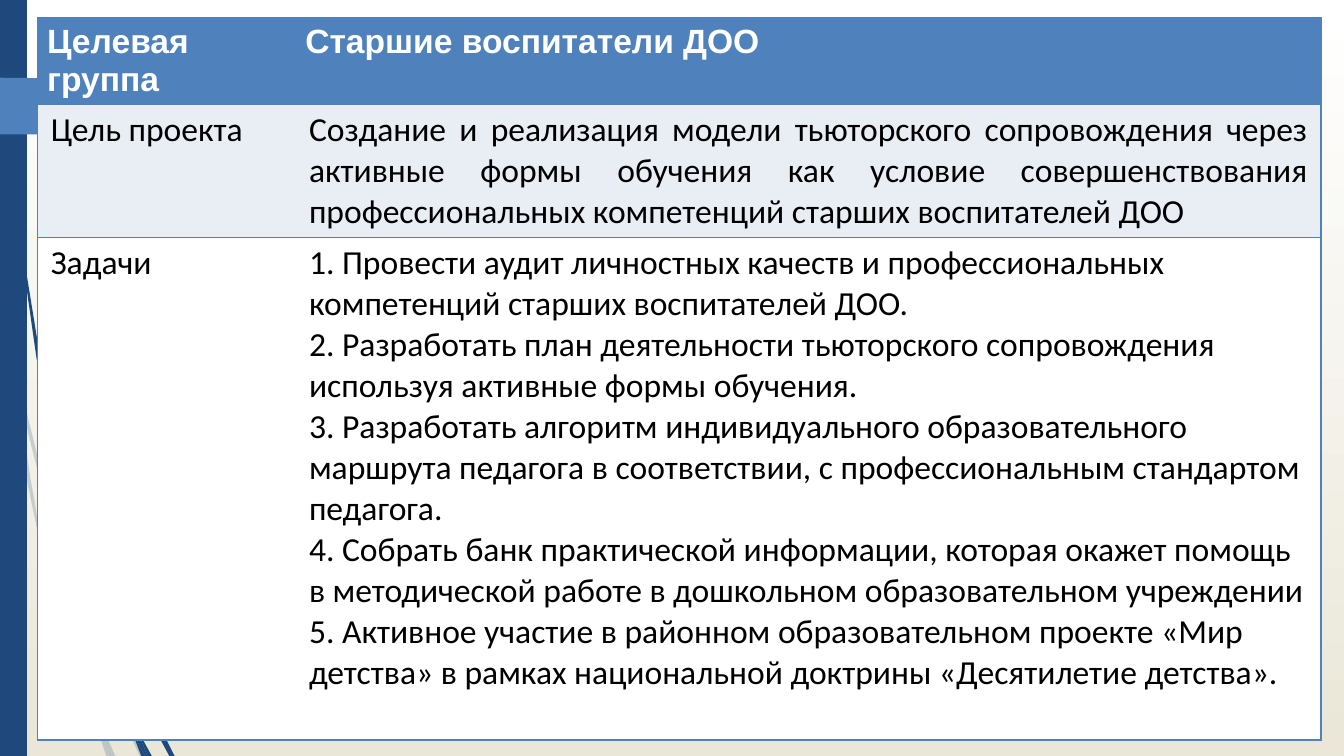
from lxml.etree import SubElement
from pptx import Presentation
from pptx.dml.color import RGBColor
from pptx.enum.shapes import MSO_SHAPE as Preset
from pptx.enum.text import PP_ALIGN as Align
from pptx.oxml.ns import qn
from pptx.util import Cm, Pt

NAVY = RGBColor(0x1F, 0x49, 0x7D)
BLUE = RGBColor(0x4F, 0x81, 0xBD)
PALE = RGBColor(0xE9, 0xED, 0xF4)
CREAM = RGBColor(0xEA, 0xE7, 0xD8)
WHITE = RGBColor(0xFF, 0xFF, 0xFF)
BLACK = RGBColor(0, 0, 0)

WIDTH, HEIGHT = 25.4, 14.29

FAINT_STEMS = [
    [(1.02, 9.93), (1.5, 11.4), (1.5, 11.18), (1.09, 9.91), (0.76, 8.81),
     (0.48, 7.7), (0.25, 6.58), (0.3, 7.16), (0.51, 8.1), (0.74, 9.02)],
    [(1.63, 11.56), (1.55, 11.35), (1.55, 11.63), (2.16, 13.21),
     (2.64, 14.29), (2.74, 14.29), (2.24, 13.18)],
    [(2.11, 14.29), (2.18, 14.29), (1.85, 13.54)],
    [(1.63, 13), (1.22, 11.79), (0.81, 10.39), (0.56, 8.94), (0.3, 7.16),
     (0.2, 6.68), (0.48, 8.94), (0.78, 10.39), (1.14, 11.84),
     (1.63, 13.21), (1.78, 13.61), (1.75, 13.46)],
    [(1.78, 13.61), (2.01, 14.29), (2.08, 14.29)],
    [(1.7, 13.18), (1.65, 13), (1.75, 13.46), (1.78, 13.61),
     (2.08, 14.29), (2.11, 14.29), (1.85, 13.54)],
]
DARK_STEMS = [
    [(0.13, 2.08), (0.36, 4.44), (0.69, 6.76), (1.17, 9.09), (1.19, 9.17),
     (1.14, 8.71), (1.14, 8.64), (0.76, 6.76), (0.38, 4.42), (0.15, 2.08),
     (0.1, 0.91), (0.08, 0), (0.05, 0), (0.08, 0.91)],
    [(2.39, 12.37), (2.31, 12.22), (2.31, 12.5), (2.77, 13.49),
     (3.2, 14.29), (3.3, 14.29), (2.87, 13.44)],
    [(2.79, 14.29), (2.87, 14.29), (2.54, 13.69)],
    [(2.46, 13.74), (2.67, 14.29), (2.74, 14.29)],
    [(2.44, 13.46), (2.31, 13.18), (2.44, 13.67), (2.46, 13.74),
     (2.74, 14.29), (2.79, 14.29), (2.54, 13.69)],
]
ARROW = [(3.78, 2.03), (3.15, 2.51), (3.07, 2.54), (0, 2.54), (0, 1.47),
         (3.07, 1.5), (3.15, 1.5), (3.78, 1.98)]

GOAL = ("Создание и реализация модели тьюторского сопровождения через активные "
        "формы обучения как условие совершенствования профессиональных "
        "компетенций старших воспитателей ДОО")
TASKS = [
    "1. Провести аудит личностных качеств и профессиональных компетенций "
    "старших воспитателей ДОО.",
    "2. Разработать план деятельности тьюторского сопровождения используя "
    "активные формы обучения.",
    "3. Разработать алгоритм индивидуального образовательного маршрута "
    "педагога в соответствии, с профессиональным стандартом педагога.",
    "4. Собрать банк практической информации, которая окажет помощь в "
    "методической работе в дошкольном образовательном учреждении",
    "5. Активное участие в районном образовательном проекте «Мир детства» "
    "в рамках национальной доктрины «Десятилетие детства».",
]
ROWS = [
    (["Целевая группа"], ["Старшие воспитатели ДОО"]),
    (["Цель проекта"], [GOAL]),
    (["Задачи"], TASKS),
]
ROW_FILLS = [BLUE, PALE, WHITE]
ROW_HEIGHTS = [1.62, 2.51, 9.5]
COLUMN_WIDTHS = [4.88, 19.38]


class SlideBuilder:
    size = Pt(18)
    border = Pt(1)

    def __init__(self, page):
        self.page = page

    def backdrop(self, top, bottom):
        fill = self.page.background.fill
        fill.gradient()
        fill.gradient_angle = 270
        for stop, color in zip(fill.gradient_stops, (top, bottom)):
            stop.color.rgb = color

    def paint(self, shape, color, opacity=100):
        shape.shadow.inherit = False
        shape.fill.solid()
        shape.fill.fore_color.rgb = color
        shape.line.fill.background()
        if opacity < 100:
            tone = shape.fill._xPr.find(qn("a:solidFill"))[0]
            SubElement(tone, qn("a:alpha"), val=str(opacity * 1000))

    def outline(self, points, color, opacity=100):
        corners = [(Cm(x), Cm(y)) for x, y in points]
        builder = self.page.shapes.build_freeform(*corners[0])
        builder.add_line_segments(corners[1:], close=True)
        self.paint(builder.convert_to_shape(), color, opacity)

    def bar(self, left, top, width, height, color):
        shape = self.page.shapes.add_shape(
            Preset.RECTANGLE, Cm(left), Cm(top), Cm(width), Cm(height))
        self.paint(shape, color)

    def edges(self, cell, hidden):
        props = cell._tc.get_or_add_tcPr()
        for side in ("lnL", "lnR", "lnT", "lnB"):
            line = SubElement(props, qn(f"a:{side}"), w=str(self.border))
            if side == hidden:
                SubElement(line, qn("a:noFill"))
            else:
                fill = SubElement(line, qn("a:solidFill"))
                SubElement(fill, qn("a:srgbClr"), val=str(BLUE))

    def cell(self, cell, lines, fill, header):
        cell.margin_left = cell.margin_right = Cm(0.18 if header else 0.25)
        cell.margin_top = cell.margin_bottom = Cm(0.1)
        cell.fill.solid()
        cell.fill.fore_color.rgb = fill
        cell.text = "\n".join(lines)
        for paragraph in cell.text_frame.paragraphs:
            font = paragraph.font
            font.name = "Arial" if header else "Calibri"
            font.size = self.size
            font.bold = header
            font.color.rgb = WHITE if header else BLACK

    def table(self, left, top, widths, heights, rows, fills):
        frame = self.page.shapes.add_table(
            len(rows), len(widths), Cm(left), Cm(top),
            Cm(sum(widths)), Cm(sum(heights)))
        table = frame.table
        table.horz_banding = False
        for column, width in zip(table.columns, widths):
            column.width = Cm(width)
        for index, (texts, height, fill) in enumerate(zip(rows, heights, fills)):
            table.rows[index].height = Cm(height)
            for cell, lines, hidden in zip(
                    table.rows[index].cells, texts, ("lnR", "lnL")):
                self.edges(cell, hidden)
                self.cell(cell, lines, fill, header=index == 0)
        return table


def main():
    deck = Presentation()
    deck.slide_width, deck.slide_height = Cm(WIDTH), Cm(HEIGHT)
    slide = SlideBuilder(deck.slides.add_slide(deck.slide_layouts[6]))
    slide.backdrop(WHITE, CREAM)
    for stem in FAINT_STEMS:
        slide.outline(stem, NAVY, opacity=20)
    for stem in DARK_STEMS:
        slide.outline(stem, NAVY)
    slide.bar(0, 0, 0.51, HEIGHT, NAVY)
    slide.outline(ARROW, BLUE)
    table = slide.table(0.71, 0.34, COLUMN_WIDTHS, ROW_HEIGHTS, ROWS, ROW_FILLS)
    table.cell(0, 1).text_frame.paragraphs[0].space_after = Pt(12)
    table.cell(1, 1).text_frame.paragraphs[0].alignment = Align.JUSTIFY
    deck.save("out.pptx")


if __name__ == "__main__":
    main()
